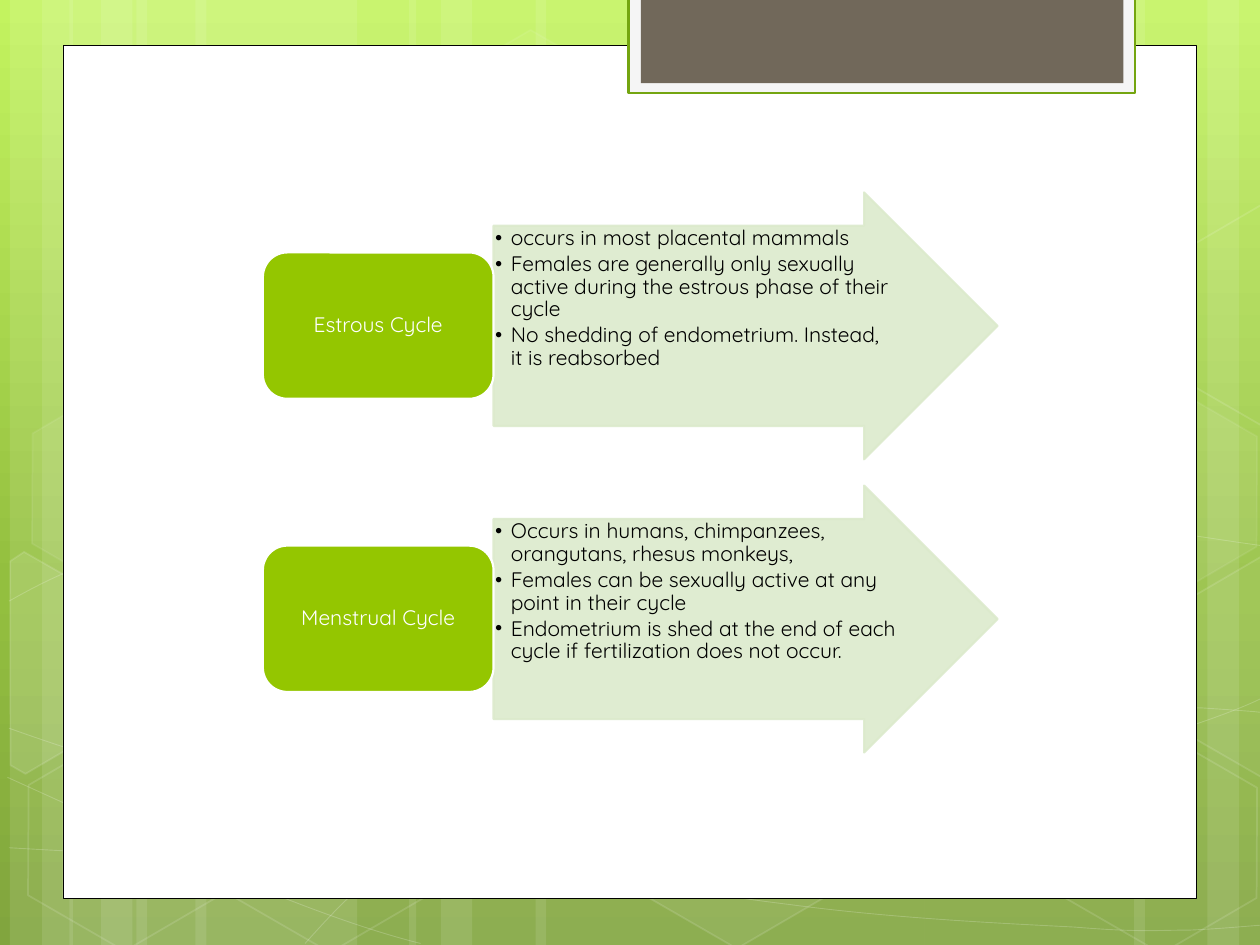
"""Build a slide that contrasts the estrous and menstrual cycles."""
import copy

import lxml.etree
import pptx
import pptx.dml.color
import pptx.enum.shapes
import pptx.enum.text
import pptx.oxml.ns
import pptx.util

Cm = pptx.util.Cm
Pt = pptx.util.Pt
qn = pptx.oxml.ns.qn
SHAPE = pptx.enum.shapes.MSO_SHAPE
ALIGN = pptx.enum.text.PP_ALIGN
ANCHOR = pptx.enum.text.MSO_ANCHOR


def paint(fill, color, opacity=100):
    """Apply a solid colour, or none, to a fill, line fill or font fill."""
    if color is None or opacity == 0:
        fill.background()
        return
    fill.solid()
    fill.fore_color.rgb = pptx.dml.color.RGBColor.from_string(color)
    if opacity < 100:
        element = fill._xPr.find(".//" + qn("a:srgbClr"))
        lxml.etree.SubElement(element, qn("a:alpha"), val=str(opacity * 1000))


def style(shape, color, opacity=100, line=None, width=1, line_opacity=100):
    """Set the fill and outline of a shape and drop its shadow."""
    shape.shadow.inherit = False
    paint(shape.fill, color, opacity)
    paint(shape.line.fill, line, line_opacity)
    if line:
        shape.line.width = Pt(width)


presentation = pptx.Presentation()
presentation.slide_width = Cm(25.4)
presentation.slide_height = Cm(19.05)
slide = presentation.slides.add_slide(presentation.slide_layouts[6])
shapes = slide.shapes

background = slide.background.fill
background.gradient()
background.gradient_angle = 270
stop_list = background._xPr.find(".//" + qn("a:gsLst"))
stop_list.append(copy.deepcopy(stop_list[-1]))
gradient = [(0, "C3F35F"), (0.62, "93BF3F"), (1, "81A53E")]
for stop, (position, color) in zip(background.gradient_stops, gradient):
    stop.position = position
    stop.color.rgb = pptx.dml.color.RGBColor.from_string(color)

stripes = [
    (2.75, 4.45, 0), (0.2, 1.27, 0), (0.85, 2.12, 0),
    (3.94, 4.45, 0), (1.4, 1.27, 0), (2.04, 2.12, 0),
    (18.63, 4.45, 180), (24.34, 1.27, 180), (22.86, 2.12, 180),
    (10.8, 7.83, 0), (8.25, 1.27, 0), (8.89, 2.12, 0),
]
for left, width, rotation in stripes:
    stripe = shapes.add_shape(SHAPE.RECTANGLE, Cm(left), 0, Cm(width), Cm(19.05))
    stripe.rotation = rotation
    style(stripe, "FFFFFF", 10)

curves = [
    [(0.18, 17.09), (1.55, 17.17), (2.92, 17.25), (4.83, 17.22),
     (6.73, 17.2), (9.09, 17.15), (11.63, 16.89),
     (14.17, 16.64), (17.78, 16.15), (20.12, 15.67),
     (22.43, 15.19), (24.82, 14.43), (25.58, 14)],
    [(0.18, 12.12), (0.91, 11.71), (1.65, 11.33), (3.07, 10.95),
     (4.52, 10.57), (6.58, 10.01), (8.81, 9.83),
     (11.07, 9.65), (13.82, 9.63), (16.61, 9.83),
     (19.41, 10.03), (24.05, 10.82), (25.58, 11.02)],
    [(0.15, 15.67), (3.23, 17.07), (6.27, 18.47), (8.48, 19.02)],
    [(0.18, 14.68), (0.97, 14.96), (1.78, 15.24), (3.25, 15.65),
     (4.72, 16.03), (6.93, 16.66), (9.07, 17.09),
     (11.18, 17.53), (13.84, 17.98), (15.95, 18.24),
     (18.06, 18.52), (20.32, 18.62), (21.67, 18.69),
     (22.99, 18.8), (23.34, 18.75), (24, 18.75),
     (24.66, 18.72), (25.12, 18.67), (25.58, 18.64)],
    [(6.15, 19.02), (6.6, 18.52), (7.06, 18.01), (7.67, 17.55),
     (8.28, 17.09), (9.14, 16.59), (9.86, 16.23),
     (10.57, 15.88), (11, 15.72), (11.94, 15.47),
     (12.85, 15.21), (14.55, 14.86), (15.44, 14.68),
     (16.36, 14.5), (16.48, 14.5), (17.27, 14.45),
     (18.06, 14.38), (19.3, 14.3), (20.17, 14.27),
     (21.06, 14.25), (22.5, 14.27), (22.5, 14.27),
     (23.07, 14.27), (23.64, 14.27), (24.21, 14.27),
     (24.66, 14.3), (25.1, 14.33), (25.32, 14.35),
     (25.55, 14.38), (25.48, 14.35), (25.55, 14.38)],
]
for controls in curves:
    points = [(Cm(x), Cm(y)) for x, y in controls]
    builder = shapes.build_freeform(*points[0])
    builder.add_line_segments(points[1:], close=False)
    curve = builder.convert_to_shape()
    outline = curve._element.find(".//" + qn("a:path"))
    segments = outline.findall(qn("a:lnTo"))
    for start in range(0, len(segments), 3):
        bezier = lxml.etree.SubElement(outline, qn("a:cubicBezTo"))
        for segment in segments[start:start + 3]:
            bezier.append(segment[0])
            outline.remove(segment)
    style(curve, None, line="FFFFFF", width=0.5, line_opacity=20)

hexagons = [
    (8.48, 0.91, 4, 8), (12.62, 14.96, 6, 12), (0.28, 15.01, 0, 12),
    (0.36, 7.92, 7, 8), (4.42, 15.04, 0, 12), (19.13, 11.51, 10, 12),
    (21.18, 15.06, 0, 12), (21.18, 7.98, 7, 8),
]
for left, top, opacity, line_opacity in hexagons:
    hexagon = shapes.add_shape(SHAPE.HEXAGON, Cm(left), Cm(top), Cm(4.45), Cm(3.86))
    hexagon.adjustments[0] = 0.285
    hexagon.rotation = 30
    style(hexagon, "FFFFFF", opacity, "FFFFFF", 1, line_opacity)

left_cut = [(0, 0.31), (0.15, 0.01), (2.41, 0), (3.5, 1.95), (2.41, 3.87), (2.06, 3.87)]
right_cut = [(0, 1.91), (1.09, 0), (1.32, 0), (3.45, 3.67), (3.34, 3.85), (1.11, 3.85)]
cut_hexagons = [(left_cut, -0.84, 11.66, 10), (right_cut, 23.29, 11.28, 4), (right_cut, 23.29, 4.19, 0)]
for corners, left, top, opacity in cut_hexagons:
    points = [(Cm(left + x), Cm(top + y)) for x, y in corners]
    builder = shapes.build_freeform(*points[0])
    builder.add_line_segments(points[1:], close=True)
    cut_hexagon = builder.convert_to_shape()
    cut_hexagon.rotation = 30
    style(cut_hexagon, "FFFFFF", opacity, "FFFFFF", 1, 12)

panels = [
    (1.27, 0.91, 22.86, 17.2, "FFFFFF", "000000", 0.5),
    (12.67, -0.05, 10.21, 1.93, "F5F5F5", "74A510", 1.25),
    (12.92, -0.05, 9.73, 1.73, "71685A", None, 0),
]
for left, top, width, height, color, line, line_width in panels:
    panel = shapes.add_shape(SHAPE.RECTANGLE, Cm(left), Cm(top), Cm(width), Cm(height))
    style(panel, color, line=line, width=line_width)

cycles = [
    ("Estrous Cycle", [
        "occurs in most placental mammals",
        "Females are generally only sexually active during the estrous phase of their cycle",
        "No shedding of endometrium. Instead, it is reabsorbed",
    ]),
    ("Menstrual Cycle", [
        "Occurs in humans, chimpanzees, orangutans, rhesus monkeys,",
        "Females can be sexually active at any point in their cycle",
        "Endometrium is shed at the end of each cycle if fertilization does not occur.",
    ]),
]
for index, (name, facts) in enumerate(cycles):
    top = 3.88 + index * 5.91
    arrow = shapes.add_shape(SHAPE.RIGHT_ARROW, Cm(9.95), Cm(top), Cm(10.16), Cm(5.38))
    arrow.adjustments[0] = 0.75
    style(arrow, "DCEACC", 90, "DCEACC", 1.25, 90)
    fact_box = shapes.add_textbox(Cm(9.95), Cm(top + 0.68), Cm(8.15), Cm(4.04))
    label = shapes.add_shape(SHAPE.ROUNDED_RECTANGLE, Cm(5.3), Cm(top + 1.21), Cm(4.65), Cm(2.95))
    style(label, "94C600", line="FFFFFF", width=1.25)
    name_box = shapes.add_textbox(Cm(5.44), Cm(top + 1.35), Cm(4.37), Cm(2.67))
    name_box.text_frame.vertical_anchor = ANCHOR.MIDDLE
    for box, lines, color, side, edge, space in [
        (fact_box, facts, "000000", 0.03, 0.03, 1.8),
        (name_box, [name], "FFFFFF", 0.12, 0.08, 0),
    ]:
        frame = box.text_frame
        frame.word_wrap = True
        frame.margin_left = frame.margin_right = Cm(side)
        frame.margin_top = frame.margin_bottom = Cm(edge)
        frame.text = "\n".join(lines)
        for paragraph in frame.paragraphs:
            paragraph.line_spacing = 0.9
            paragraph.space_after = Pt(space)
            font = paragraph.runs[0].font
            font.name = "Quicksand"
            font.size = Pt(12)
            paint(font.fill, color)
    name_box.text_frame.paragraphs[0].alignment = ALIGN.CENTER
    for paragraph in fact_box.text_frame.paragraphs:
        paragraph.level = 1
        properties = paragraph._p.get_or_add_pPr()
        properties.set("marL", str(Cm(0.32)))
        properties.set("indent", str(-Cm(0.32)))
        lxml.etree.SubElement(properties, qn("a:buFont"), typeface="Quicksand")
        lxml.etree.SubElement(properties, qn("a:buChar"), char="•")

presentation.save("out.pptx")
